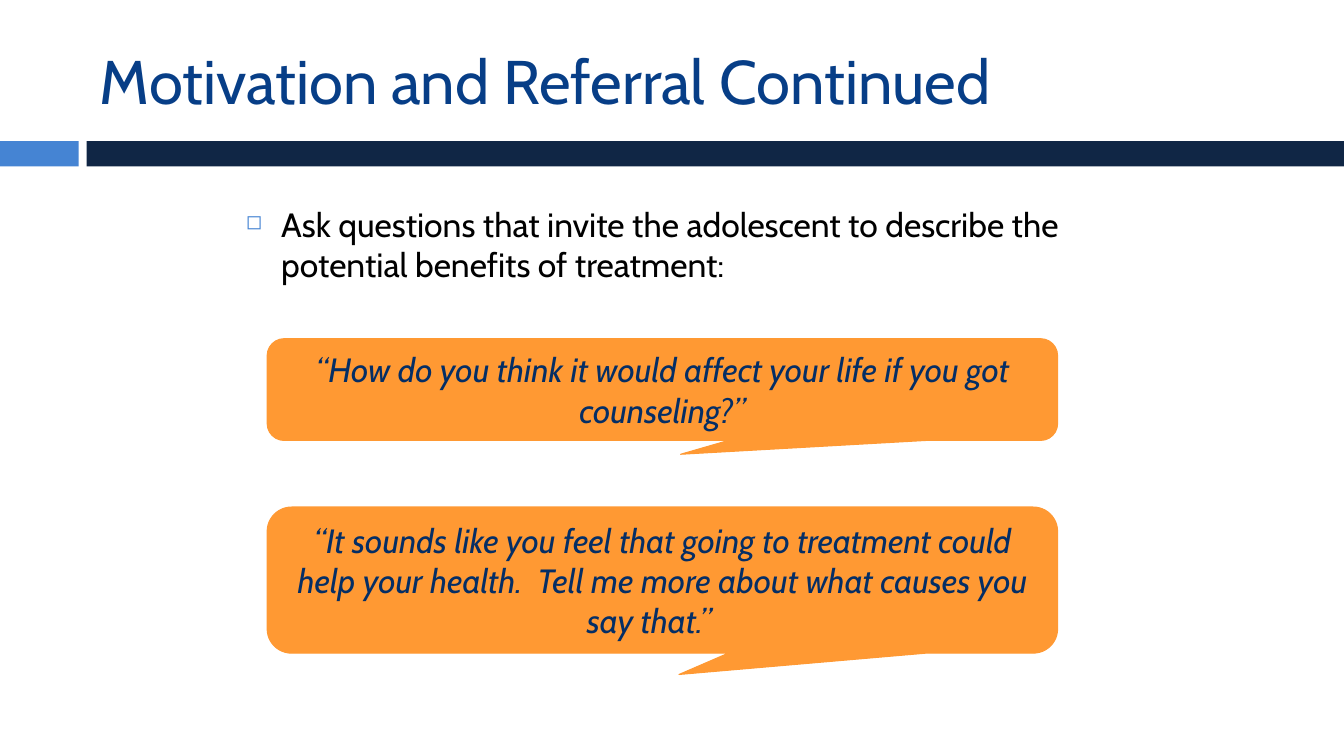
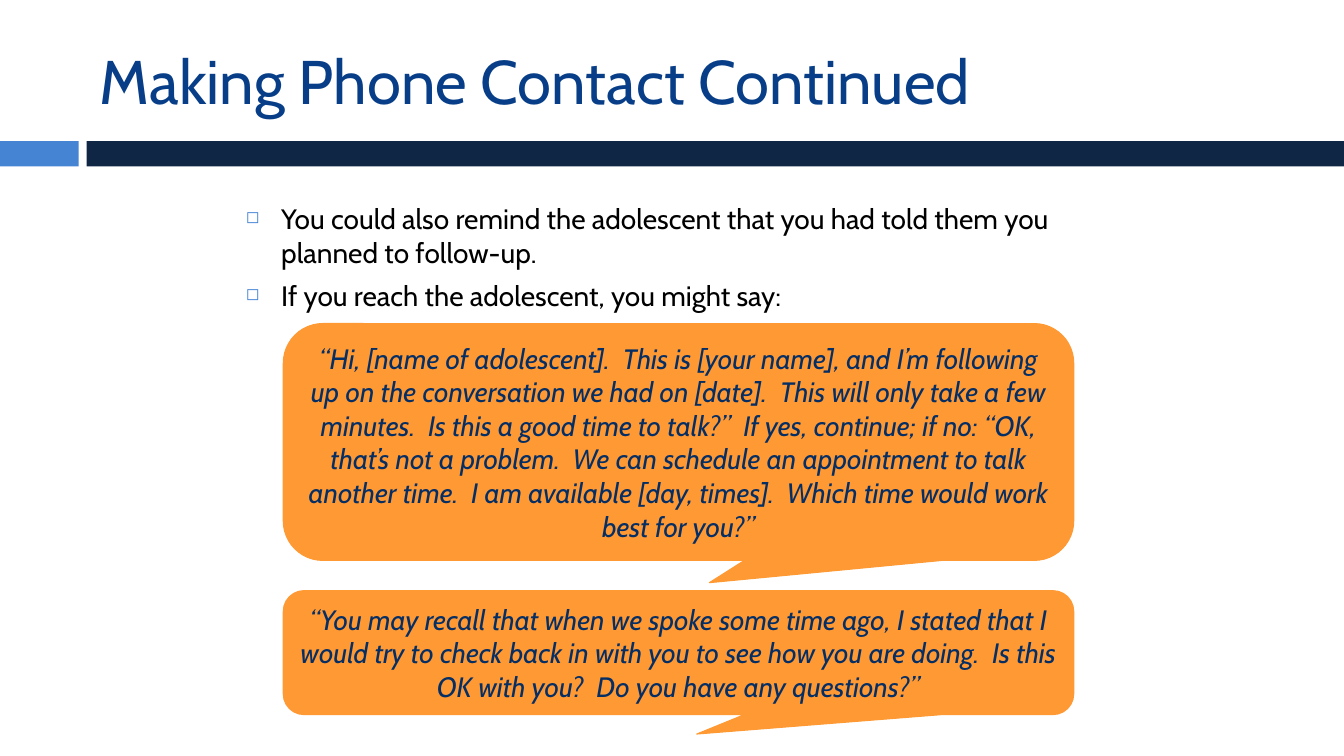
"""Build two slides on talking with adolescents about treatment."""
from lxml import etree
from pptx import Presentation
from pptx.dml.color import RGBColor
from pptx.enum.shapes import MSO_SHAPE
from pptx.enum.text import MSO_ANCHOR, MSO_AUTO_SIZE, PP_ALIGN
from pptx.oxml.ns import qn
from pptx.util import Inches, Pt

RECT, BUBBLE = MSO_SHAPE.RECTANGLE, MSO_SHAPE.ROUNDED_RECTANGULAR_CALLOUT
LEFT, CENTER = PP_ALIGN.LEFT, PP_ALIGN.CENTER
TOP, MIDDLE = MSO_ANCHOR.TOP, MSO_ANCHOR.MIDDLE
FIXED = MSO_AUTO_SIZE.NONE

FONT = "Cabin"
BLUE = RGBColor(0x45, 0x84, 0xD3)
NAVY = RGBColor(0x10, 0x26, 0x45)
TITLE = RGBColor(0x07, 0x3E, 0x87)
QUOTE = RGBColor(0x05, 0x2E, 0x65)
ORANGE = RGBColor(0xFF, 0x99, 0x33)
BLACK = RGBColor(0, 0, 0)

WIDE, HIGH = 13.33, 7.5
BAND_TOP, BAND_HIGH = 1.4, 0.25
BANDS = [(0, 0.78, BLUE), (0.86, WIDE - 0.86, NAVY)]
TITLE_BOX = (0.89, 0.25, 11.89, 1.08)
BODY_LEFT, BODY_WIDE = 2.34, 8.92
QUOTE_WIDE = 7.84
INDENT = 0.35

SLIDES = [
    {
        "title": "Motivation and Referral Continued",
        "size": 24,
        "body": (1.97, 4.7),
        "points": [
            "Ask questions that invite the adolescent to describe the "
            "potential benefits of treatment:",
        ],
        "left": 2.65,
        "quotes": [
            (3.36, 1.01, (0.023, 0.636),
             "“How do you think it would affect your life if you got "
             "counseling?”"),
            (5.03, 1.45, (0.021, 0.646),
             "“It sounds like you feel that going to treatment could help "
             "your health.  Tell me more about what causes you say that.”\t"),
        ],
    },
    {
        "title": "Making Phone Contact Continued",
        "size": 20,
        "body": (1.95, 4.92),
        "points": [
            "You could also remind the adolescent that you had told them "
            "you planned to follow-up.",
            "If you reach the adolescent, you might say:",
        ],
        "left": 2.81,
        "quotes": [
            (3.21, 2.35, (0.039, 0.594),
             "“Hi, [name of adolescent].  This is [your name], and I’m "
             "following up on the conversation we had on [date].  This will "
             "only take a few minutes.  Is this a good time to talk?”  If "
             "yes, continue; if no: “OK, that’s not a problem.  We can "
             "schedule an appointment to talk another time.  I am available "
             "[day, times].  Which time would work best for you?”"),
            (5.86, 1.23, (0.023, 0.657),
             "“You may recall that when we spoke some time ago, I stated "
             "that I would try to check back in with you to see how you are "
             "doing.  Is this OK with you?  Do you have any questions?”"),
        ],
    },
]


def place(*box):
    return [Inches(part) for part in box]


def set_frame(frame, anchor):
    frame.word_wrap = True
    frame.auto_size = FIXED
    frame.vertical_anchor = anchor


def write(para, text, size, color, align=LEFT, italic=False):
    para.alignment = align
    run = para.add_run()
    run.text = text
    font = run.font
    font.name, font.size, font.italic = FONT, Pt(size), italic
    font.color.rgb = color


def add_block(slide, kind, box, color):
    shape = slide.shapes.add_shape(kind, *place(*box))
    shape.shadow.inherit = False
    shape.fill.solid()
    shape.fill.fore_color.rgb = color
    shape.line.fill.background()
    return shape


def add_title(slide, text):
    title = slide.shapes.title
    title.left, title.top, title.width, title.height = place(*TITLE_BOX)
    set_frame(title.text_frame, MIDDLE)
    write(title.text_frame.paragraphs[0], text, 44, TITLE)


def add_bullet(para):
    props = para._p.get_or_add_pPr()
    props.set("marL", str(Inches(INDENT)))
    props.set("indent", str(-Inches(INDENT)))
    color = etree.SubElement(props, qn("a:buClr"))
    etree.SubElement(color, qn("a:srgbClr"), val=str(BLUE))
    etree.SubElement(props, qn("a:buSzPct"), val="60000")
    etree.SubElement(props, qn("a:buChar"), char="◻")


def add_points(slide, points, top, high, size):
    box = slide.shapes.add_textbox(*place(BODY_LEFT, top, BODY_WIDE, high))
    frame = box.text_frame
    set_frame(frame, TOP)
    for num, text in enumerate(points):
        para = frame.add_paragraph() if num else frame.paragraphs[0]
        para.space_before = Pt(7)
        write(para, text, size, BLACK)
        add_bullet(para)


def add_quote(slide, left, top, high, tip, text, size):
    shape = add_block(slide, BUBBLE, (left, top, QUOTE_WIDE, high), ORANGE)
    shape.line.color.rgb = ORANGE
    shape.line.width = Pt(0.75)
    for num, value in enumerate((*tip, 0.167)):
        shape.adjustments[num] = value
    set_frame(shape.text_frame, MIDDLE)
    para = shape.text_frame.paragraphs[0]
    para.space_before, para.space_after = Pt(5), Pt(6)
    write(para, text, size, QUOTE, CENTER, True)


def main():
    deck = Presentation()
    deck.slide_width, deck.slide_height = place(WIDE, HIGH)
    for data in SLIDES:
        slide = deck.slides.add_slide(deck.slide_layouts[5])
        for left, wide, color in BANDS:
            add_block(slide, RECT, (left, BAND_TOP, wide, BAND_HIGH), color)
        add_title(slide, data["title"])
        add_points(slide, data["points"], *data["body"], data["size"])
        for quote in data["quotes"]:
            add_quote(slide, data["left"], *quote, data["size"])
    deck.save("out.pptx")


if __name__ == "__main__":
    main()
